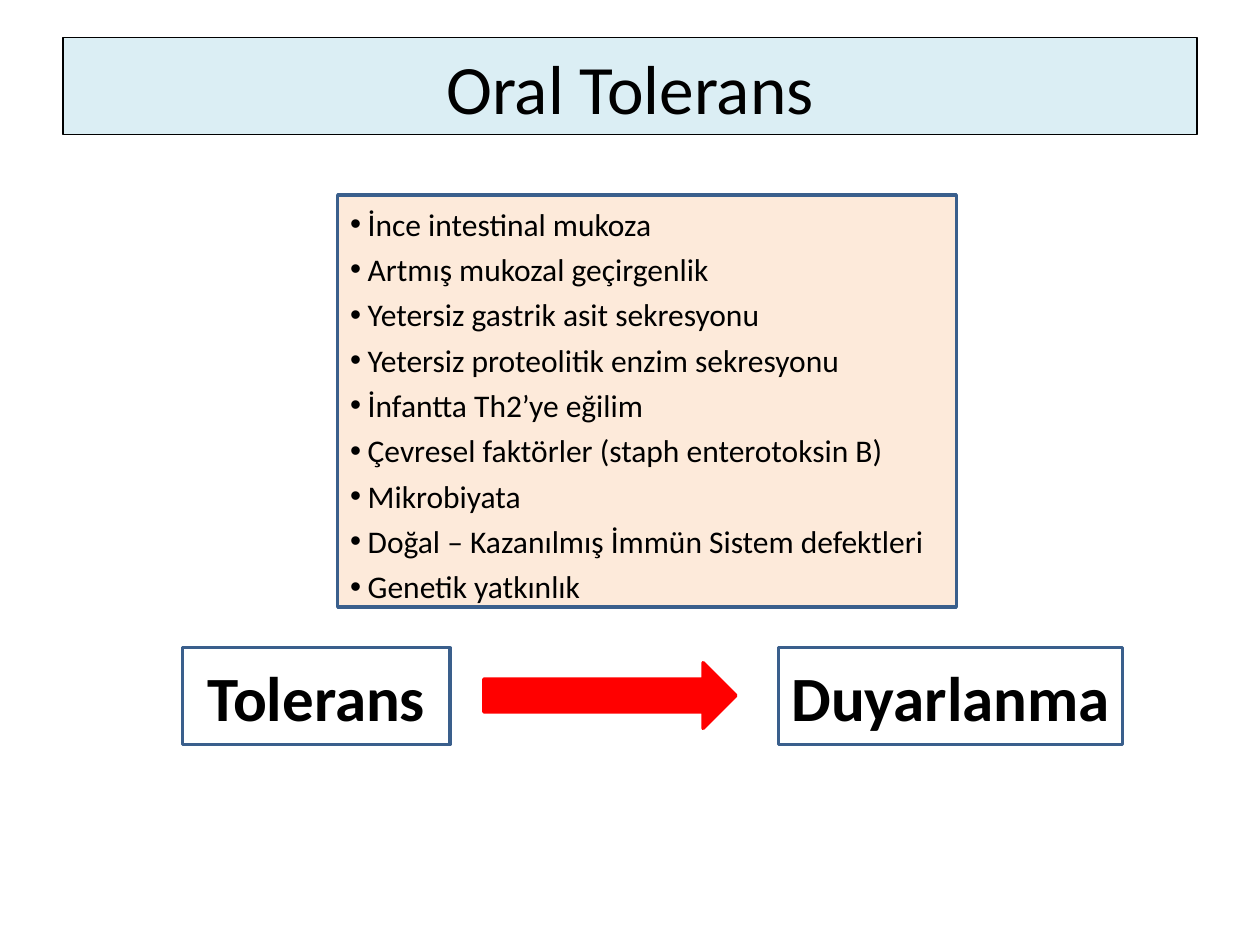
from pptx import Presentation
from pptx.dml.color import RGBColor
from pptx.enum.shapes import MSO_SHAPE
from pptx.enum.text import MSO_ANCHOR, MSO_AUTO_SIZE, PP_ALIGN
from pptx.oxml import parse_xml
from pptx.oxml.ns import nsdecls
from pptx.util import Inches, Pt

BLACK = RGBColor(0x00, 0x00, 0x00)
PALE_BLUE = RGBColor(0xDB, 0xEE, 0xF4)
PEACH = RGBColor(0xFD, 0xEA, 0xDA)
STEEL = RGBColor(0x3A, 0x5F, 0x8C)
RED = RGBColor(0xFF, 0x00, 0x00)

RISK_FACTORS = [
    "İnce intestinal mukoza",
    "Artmış mukozal geçirgenlik",
    "Yetersiz gastrik asit sekresyonu",
    "Yetersiz proteolitik enzim sekresyonu",
    "İnfantta Th2’ye eğilim",
    "Çevresel faktörler (staph enterotoksin B)",
    "Mikrobiyata",
    "Doğal – Kazanılmış İmmün Sistem defektleri",
    "Genetik yatkınlık",
]


class SlideBuilder:
    """Draws styled elements on one slide, placed on a grid of 100 columns by 75 rows."""

    font = "Calibri"
    columns, rows = 100, 75

    def __init__(self, deck):
        self.column = deck.slide_width / self.columns
        self.row = deck.slide_height / self.rows
        self.slide = deck.slides.add_slide(deck.slide_layouts[5])

    def place(self, left, top, width, height):
        return (
            round(left * self.column),
            round(top * self.row),
            round(width * self.column),
            round(height * self.row),
        )

    def paint(self, shape, fill, line, weight):
        if fill is None:
            shape.fill.background()
        else:
            shape.fill.solid()
            shape.fill.fore_color.rgb = fill
        shape.line.color.rgb = line
        shape.line.width = Pt(weight)

    def label(self, shape, lines, size, bold=False, align=PP_ALIGN.CENTER, wrap=True):
        frame = shape.text_frame
        frame.text = "\n".join(lines)
        frame.word_wrap = wrap
        frame.auto_size = MSO_AUTO_SIZE.NONE
        frame.vertical_anchor = MSO_ANCHOR.MIDDLE
        for paragraph in frame.paragraphs:
            paragraph.alignment = align
            for run in paragraph.runs:
                run.font.name = self.font
                run.font.size = Pt(size)
                run.font.bold = bold
                run.font.color.rgb = BLACK

    def title(self, text, *area):
        title = self.slide.shapes.title
        title.left, title.top, title.width, title.height = self.place(*area)
        self.paint(title, PALE_BLUE, BLACK, 0.75)
        self.label(title, [text], 39.6)

    def block(self, preset, area, fill, line):
        block = self.slide.shapes.add_shape(preset, *self.place(*area))
        block.shadow.inherit = False
        self.paint(block, fill, line, 2)
        return block

    def state(self, text, *area):
        state = self.block(MSO_SHAPE.RECTANGLE, area, None, STEEL)
        self.label(state, [text], 36, bold=True, wrap=False)

    def bullet_list(self, items, *area):
        panel = self.block(MSO_SHAPE.RECTANGLE, area, PEACH, STEEL)
        self.label(panel, items, 18, align=PP_ALIGN.LEFT)
        indent = Inches(0.14)
        for paragraph in panel.text_frame.paragraphs:
            paragraph.line_spacing = 1.2
            properties = paragraph._p.get_or_add_pPr()
            properties.set("marL", str(indent))
            properties.set("indent", str(-indent))
            for tag in ('buFont %s typeface="Arial"', 'buChar %s char="•"'):
                properties.append(parse_xml(f"<a:{tag % nsdecls('a')}/>"))

    def arrow(self, *area):
        self.block(MSO_SHAPE.RIGHT_ARROW, area, RED, RED)


def main():
    deck = Presentation()
    deck.slide_width, deck.slide_height = Inches(10), Inches(7.5)
    builder = SlideBuilder(deck)
    builder.title("Oral Tolerans", 5, 3, 90, 7.7)
    builder.state("Tolerans", 14.5, 51.4, 21.2, 7.7)
    builder.state("Duyarlanma", 61.8, 51.4, 27.3, 7.7)
    builder.bullet_list(RISK_FACTORS, 26.8, 15.5, 49.1, 32.7)
    builder.arrow(38.4, 52.6, 20, 5.2)
    deck.save("out.pptx")


if __name__ == "__main__":
    main()
